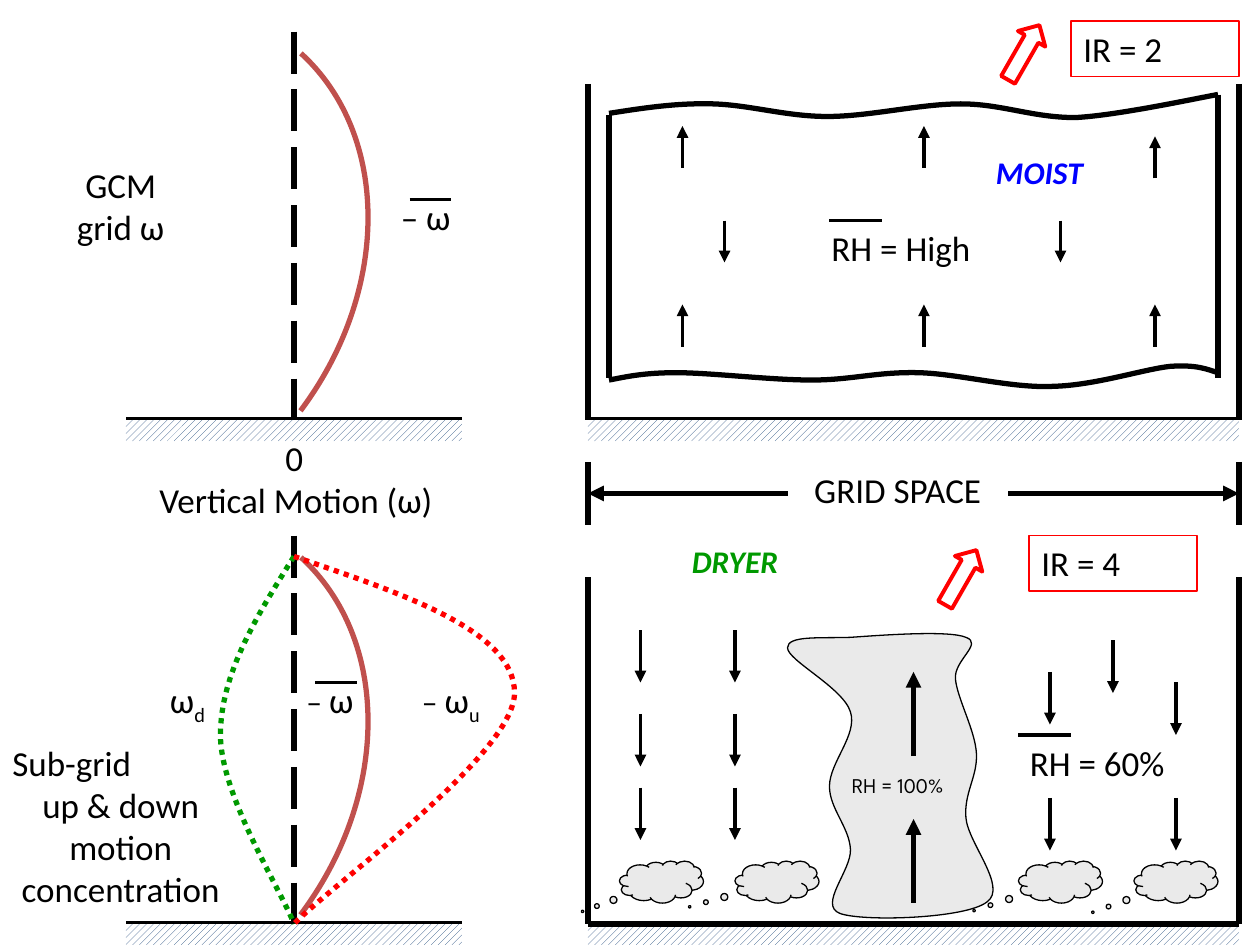
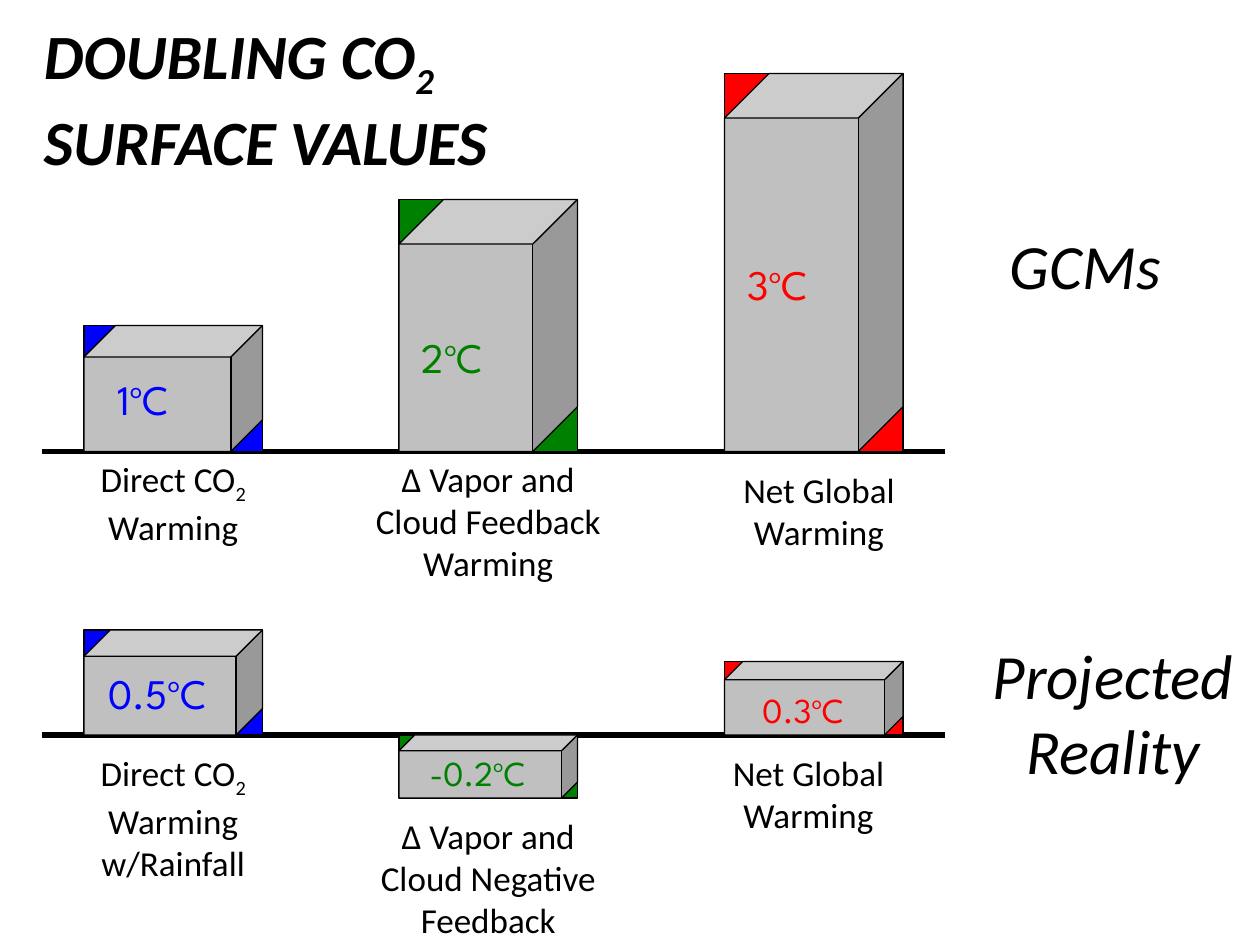
from dataclasses import dataclass
from typing import NamedTuple, Optional

from lxml.etree import SubElement
from pptx import Presentation
from pptx.dml.color import RGBColor
from pptx.enum.dml import MSO_LINE, MSO_PATTERN
from pptx.enum.shapes import MSO_CONNECTOR, MSO_SHAPE
from pptx.enum.text import MSO_ANCHOR, PP_ALIGN
from pptx.oxml.ns import qn
from pptx.util import Cm, Pt

CELL = Cm(2.54) / 12  # both slides sit on a grid of twelve cells to the inch


@dataclass(frozen=True)
class Theme:
    black: str = "000000"
    white: str = "FFFFFF"
    red: str = "FF0000"
    blue: str = "0000FF"
    bar_green: str = "008000"
    dry_green: str = "009900"
    mean_motion: str = "C0504D"
    hatch: str = "1F497D"
    cloud: str = "EAEAEA"
    cube: str = "C0C0C0"
    text_font: str = "Calibri"
    value_font: str = "League Spartan"
    title: int = 36
    value: int = 24
    body: int = 20
    small: int = 18
    tiny: int = 12
    thick: float = 3
    medium: float = 2.25
    thin: float = 0.75


T = Theme()


class Box(NamedTuple):
    left: float
    top: float
    width: float
    height: float


class Span(NamedTuple):
    text: str
    baseline: int = 0
    size: Optional[int] = None


class Style(NamedTuple):
    size: int = T.body
    color: str = T.black
    font: str = T.text_font
    bold: bool = False
    italic: bool = False
    align: PP_ALIGN = PP_ALIGN.LEFT


class Bar(NamedTuple):
    """A cube standing on, or hanging from, its baseline."""
    box: Box
    color: str
    value: str
    value_box: Box
    value_style: Style
    caption: tuple[Span, ...]
    caption_box: Box


CENTERED = Style(align=PP_ALIGN.CENTER)
DASH = Span("– ", size=T.small)
OMEGA = Span("ω")


def cells(n: float) -> int:
    return round(n * CELL)


def rgb(color: str) -> RGBColor:
    return RGBColor.from_string(color)


def outline(sp, color: str, width: float, dash=None) -> None:
    sp.line.color.rgb = rgb(color)
    sp.line.width = Pt(width)
    if dash:
        sp.line.dash_style = dash


def fill_shape(sp, fill: Optional[str]) -> None:
    sp.shadow.inherit = False
    if fill:
        sp.fill.solid()
        sp.fill.fore_color.rgb = rgb(fill)
    else:
        sp.fill.background()


def add_preset(s, kind, box: Box, fill: Optional[str] = None,
               color: str = T.black, width: float = T.thin):
    sp = s.shapes.add_shape(kind, *map(cells, box))
    fill_shape(sp, fill)
    outline(sp, color, width)
    return sp


def add_line(s, x1: float, y1: float, x2: float, y2: float,
             width: float = T.thick, dash=None, arrow: bool = False) -> None:
    c = s.shapes.add_connector(MSO_CONNECTOR.STRAIGHT, *map(cells, (x1, y1, x2, y2)))
    outline(c, T.black, width, dash)
    if arrow:
        SubElement(c.get_or_add_ln(), qn("a:tailEnd"), type="triangle")
    SubElement(c.element.spPr, qn("a:effectLst"))


def add_text(s, box: Box, paragraphs, style: Style = Style()):
    """Each paragraph is a string or a tuple of spans."""
    tb = s.shapes.add_textbox(*map(cells, box))
    tf = tb.text_frame
    tf.word_wrap = True
    tf.vertical_anchor = MSO_ANCHOR.TOP
    for i, spans in enumerate(paragraphs):
        p = tf.add_paragraph() if i else tf.paragraphs[0]
        p.alignment = style.align
        f = p.font
        f.name, f.size, f.bold, f.italic = style.font, Pt(style.size), style.bold, style.italic
        f.color.rgb = rgb(style.color)
        for span in (Span(spans),) if isinstance(spans, str) else spans:
            r = p.add_run()
            r.text = span.text
            if span.size:
                r.font.size = Pt(span.size)
            if span.baseline:
                r.font._element.set("baseline", str(span.baseline * 1000))
    return tb


def bezier(points, steps: int = 16):
    """Sample a chain of cubic curves that share their end points."""
    samples = [points[0]]
    for i in range(0, len(points) - 1, 3):
        a, b, c, d = points[i:i + 4]
        for t in (k / steps for k in range(1, steps + 1)):
            u = 1 - t
            weights = u ** 3, 3 * u * u * t, 3 * u * t * t, t ** 3
            samples.append(tuple(sum(w * q[axis] for w, q in zip(weights, (a, b, c, d)))
                                 for axis in (0, 1)))
    return samples


def add_curve(s, points, color: str = T.black, width: float = T.thick,
              dash=None, fill: Optional[str] = None, corners=()):
    """Size a freeform by sampling, then draw it with true cubic curves.

    Corners widen the frame without being drawn.
    """
    start, *rest = [(cells(x), cells(y)) for x, y in (*bezier(points), *corners)]
    builder = s.shapes.build_freeform(*start)
    builder.add_line_segments(rest, close=False)
    sp = builder.convert_to_shape()
    track = sp.element.find(".//" + qn("a:path"))
    for child in list(track):
        track.remove(child)
    for i, (x, y) in enumerate(points):
        if i == 0:
            segment = SubElement(track, qn("a:moveTo"))
        elif i % 3 == 1:
            segment = SubElement(track, qn("a:cubicBezTo"))
        SubElement(segment, qn("a:pt"), x=str(cells(x) - sp.left), y=str(cells(y) - sp.top))
    if fill:
        SubElement(track, qn("a:close"))
    fill_shape(sp, fill)
    outline(sp, color, width, dash)
    return sp


def add_ground(s, box: Box) -> None:
    sp = add_preset(s, MSO_SHAPE.RECTANGLE, box)
    sp.fill.patterned()
    sp.fill.pattern = MSO_PATTERN.WIDE_UPWARD_DIAGONAL
    sp.fill.fore_color.rgb = rgb(T.hatch)
    sp.fill.back_color.rgb = rgb(T.white)
    sp.line.fill.background()


def add_radiation(s, arrow: Box, label: Box, text: str) -> None:
    add_preset(s, MSO_SHAPE.UP_ARROW, arrow, color=T.red, width=T.medium).rotation = 29.8
    outline(add_text(s, label, [text]), T.red, T.thin)


MEAN_MOTION = [(18.6, 8), (30.1, 9.1), (39, 21), (39, 35.25)]  # before its rotation
MEAN_CENTER = (17, 35.25)
DOWN_MOTION = [(28, 53), (24.5, 58.6), (21, 64.2), (21, 70), (21, 75.8), (26.9, 85), (28, 88)]
UP_MOTION = [(28, 53), (38.5, 56.6), (49, 60.1), (49, 66), (49, 71.9), (31.4, 84.4), (28, 88)]
MOIST_TOP = [
    (58, 10.8), (61.2, 10.3), (64.4, 9.8), (67.9, 9.9), (71.4, 10), (74.9, 11.1),
    (78.8, 11.1), (82.8, 11.1), (87.6, 9.9), (91.5, 9.9), (95.4, 9.9), (98.3, 11.2),
    (102.4, 11.2), (106.4, 11), (113.8, 9.4), (116, 9)]
MOIST_BOTTOM = [
    (58, 36.2), (59.6, 35.9), (61.2, 35.5), (64.4, 35.5), (67.7, 35.5), (73.4, 36.2),
    (77.3, 36.2), (81.1, 36.2), (83.5, 35.4), (87.5, 35.5), (91.3, 35.6), (96.4, 37),
    (100.3, 36.8), (104.3, 36.7), (108.8, 35.2), (111.4, 34.9), (114, 34.7), (115, 35.2),
    (116, 35.5)]
CLOUD_TOWER = [
    (81, 60.7), (83.9, 60.5), (90.4, 60), (92, 60.7), (93.7, 61.3), (90.8, 62.9),
    (91, 64.7), (91.2, 66.6), (92.9, 69.6), (93, 71.8), (93.1, 74), (91.8, 75.5),
    (92, 77.9), (92.2, 80.3), (96, 84.5), (94, 85.9), (92, 87.5), (82.2, 87.8),
    (80, 87), (77.9, 86.2), (81.1, 82.9), (81, 80.9), (80.9, 78.8), (79, 77),
    (79, 74.9), (79, 72.6), (81.7, 70), (81, 67.8), (80.3, 65.5), (75, 62.9),
    (75, 61.7), (75, 60.5), (78.1, 60.8), (81, 60.7)]


def build_grid_space(s) -> None:
    left, right, axis = 56, 118, 28

    # Frames, axes and ground of the upper and lower rows
    for ground, wall_top, axis_top, shift in ((40, 8, 3, 0), (88, 55, 51, 48)):
        for x in (left, right):
            add_line(s, x, wall_top, x, ground)
        add_line(s, axis, axis_top, axis, ground, dash=MSO_LINE.LONG_DASH)
        add_line(s, 12, ground, 44, ground)
        *arc, center = [(x, y + shift) for x, y in (*MEAN_MOTION, MEAN_CENTER)]
        add_curve(s, arc, T.mean_motion, corners=[center]).rotation = 36.9
        if ground == 40:
            add_line(s, left, ground, right, ground)
        add_ground(s, Box(left, ground, right - left, 2))
        add_ground(s, Box(12, ground, 32, 2))
    add_line(s, left, 88, right, 88)

    # Width of the grid space
    for x, inner in ((left, 75), (right, 96)):
        add_line(s, x, 44, x, 50)
        add_line(s, inner, 47, x, 47, arrow=True)
    add_text(s, Box(74, 44, 23, 5.2), ["GRID SPACE"], CENTERED)

    # Vertical motion profiles
    add_curve(s, DOWN_MOTION, T.dry_green, dash=MSO_LINE.ROUND_DOT)
    add_curve(s, UP_MOTION, T.red, dash=MSO_LINE.ROUND_DOT)
    for x, y, width, spans in (
            (26, 41, 4, "0"), (14, 45, 32, "Vertical Motion (ω)"), (37, 18, 9, "– ω"),
            (28, 64, 8, (DASH, OMEGA)), (15, 64, 9, (OMEGA, Span("d", -25))),
            (39, 64, 9, (DASH, OMEGA, Span("u", -25))), (78, 21, 20, "RH = High")):
        add_text(s, Box(x, y, width, 5.2), [spans])
    add_text(s, Box(4, 15, 15, 9.2), ["GCM grid ω"], CENTERED)
    sub_grid = add_text(s, Box(0, 70, 23, 17.2),
                        ["Sub-grid", "up & down motion concentration"], CENTERED)
    sub_grid.text_frame.paragraphs[0].alignment = PP_ALIGN.LEFT

    # Moist layer
    add_curve(s, MOIST_TOP)
    add_curve(s, MOIST_BOTTOM)
    add_line(s, 58, 11, 58, 36)
    add_line(s, 116, 9, 116, 36)

    # Convective tower and shallow clouds
    add_curve(s, CLOUD_TOWER, width=T.thin, fill=T.cloud)
    for x, tail in ((59, (-0.94, 0.7)), (70, (-1.04, 0.59)),
                    (97, (-1.03, 0.68)), (108, (-0.99, 0.72))):
        sp = add_preset(s, MSO_SHAPE.CLOUD_CALLOUT, Box(x, 82, 8, 4), T.cloud)
        sp.adjustments[0], sp.adjustments[1] = tail
    for y in (86, 72):
        add_line(s, 87, y, 87, y - 8, arrow=True)
    add_text(s, Box(78, 73, 15, 3.6), ["RH = 100%"],
             Style(T.tiny, font=T.value_font, align=PP_ALIGN.CENTER))
    add_text(s, Box(95, 70, 19, 5.2), ["RH = 60%"], CENTERED)

    # Air motion as x, start and signed length
    rising = [(65, 33), (88, 33), (110, 33), (65, 16), (88, 16), (110, 17)]
    sinking = [(x, y) for x in (61, 70) for y in (60, 68, 75)]
    sinking += [(106, 61), (100, 64), (112, 65), (100, 76), (112, 76)]
    motions = [(x, y, -4) for x, y in rising] + [(69, 21, 4), (101, 21, 4)]
    motions += [(x, y, 5) for x, y in sinking]
    for x, y, length in motions:
        add_line(s, x, y, x, y + length, T.medium, arrow=True)

    # Bars over averaged quantities
    for x, y, length in ((39, 19, 4), (30, 65, 4), (79, 21, 5), (97, 70, 5)):
        add_line(s, x, y, x + length, y, T.medium)

    add_radiation(s, Box(96, 2, 3, 6), Box(102, 2, 16, 5.3), "IR = 2")
    add_radiation(s, Box(90, 52, 3, 6), Box(98, 51, 16, 5.3), "IR = 4")
    for x, y, word, color in ((93, 14, "MOIST", T.blue), (64, 51, "DRYER", T.dry_green)):
        add_text(s, Box(x, y, 12, 4.8), [word],
                 Style(T.small, color, bold=True, italic=True, align=PP_ALIGN.CENTER))


def value_style(color: str, size: int = T.value, align=PP_ALIGN.CENTER) -> Style:
    return Style(size, color, T.value_font, align=align)


def co2_caption(ending: str) -> tuple[Span, ...]:
    return Span("Direct CO"), Span("2", -25), Span(ending)


NET = (Span("Net Global Warming"),)
LEFT = PP_ALIGN.LEFT
BARS = [
    Bar(Box(8, 31, 17, 12), T.blue, "1", Box(10, 35, 10, 6), value_style(T.blue, align=LEFT),
        co2_caption(" Warming"), Box(8, 43, 17, 13.2)),
    Bar(Box(38, 19, 17, 24), T.bar_green, "2", Box(39, 31, 10, 6),
        value_style(T.bar_green, align=LEFT),
        (Span("∆ Vapor and Cloud Feedback Warming"),), Box(33, 43, 27, 13.2)),
    Bar(Box(69, 7, 17, 36), T.red, "3", Box(70, 24, 10, 6), value_style(T.red, align=LEFT),
        NET, Box(65, 44, 26, 9.2)),
    Bar(Box(8, 60, 17, 10), T.blue, "0.5", Box(8, 63, 14, 6), value_style(T.blue),
        co2_caption(" Warming w/Rainfall"), Box(8, 71, 17, 17.2)),
    Bar(Box(38, 70, 17, 6), T.bar_green, "-0.2", Box(38, 71, 15, 5.2),
        value_style(T.bar_green, T.body),
        (Span("∆ Vapor and Cloud Negative Feedback"),), Box(33, 77, 27, 13.2)),
    Bar(Box(69, 63, 17, 7), T.red, "0.3", Box(69, 65, 15, 5.2), value_style(T.red, T.body),
        NET, Box(64, 71, 26, 9.2)),
]


def build_surface_values(s) -> None:
    for y in (43, 70):
        add_line(s, 4, y, 90, y)
    for bar in BARS:
        add_preset(s, MSO_SHAPE.RECTANGLE, bar.box, bar.color)
        add_preset(s, MSO_SHAPE.CUBE, bar.box, T.cube)
        add_text(s, bar.value_box, [(Span(bar.value), Span("o", 40), Span("C"))],
                 bar.value_style)
        add_text(s, bar.caption_box, [bar.caption], CENTERED)
    heading = Style(T.title, italic=True)
    add_text(s, Box(95, 21, 20, 8.4), ["GCMs"], heading)
    add_text(s, Box(92, 60, 28, 15.6), ["Projected Reality"],
             heading._replace(align=PP_ALIGN.CENTER))
    add_text(s, Box(3, 1, 49, 15.7),
             [(Span("DOUBLING CO"), Span("2 ", -24), Span("SURFACE VALUES"))],
             heading._replace(bold=True))


def main() -> None:
    prs = Presentation()
    prs.slide_width, prs.slide_height = Cm(25.4), Cm(19.05)
    for build in (build_grid_space, build_surface_values):
        build(prs.slides.add_slide(prs.slide_layouts[6]))
    prs.save("out.pptx")


if __name__ == "__main__":
    main()
